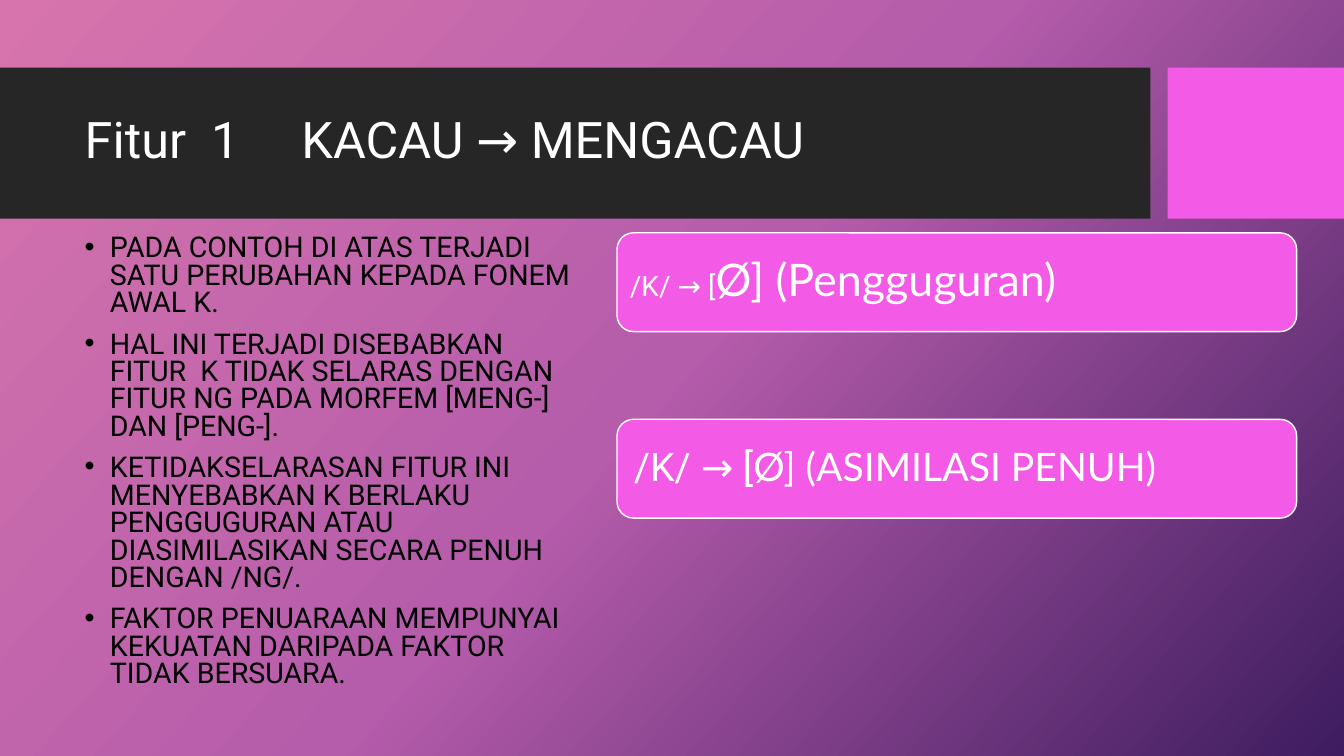
"""Build the slide on the sound change from KACAU to MENGACAU."""
from copy import deepcopy
from dataclasses import dataclass

from lxml import etree
from pptx import Presentation
from pptx.dml.color import RGBColor
from pptx.enum.shapes import MSO_SHAPE
from pptx.enum.text import MSO_ANCHOR, MSO_AUTO_SIZE, PP_ALIGN
from pptx.oxml.ns import qn
from pptx.util import Inches, Pt

RECT, ROUND = MSO_SHAPE.RECTANGLE, MSO_SHAPE.ROUNDED_RECTANGLE
TOP, MIDDLE = MSO_ANCHOR.TOP, MSO_ANCHOR.MIDDLE
LEFT, FIXED = PP_ALIGN.LEFT, MSO_AUTO_SIZE.NONE

TITLE = "Fitur  1\tKACAU → MENGACAU"
POINTS = [
    "PADA CONTOH DI ATAS TERJADI SATU PERUBAHAN KEPADA FONEM AWAL K.",
    "HAL INI TERJADI DISEBABKAN FITUR  K TIDAK SELARAS DENGAN FITUR NG "
    "PADA MORFEM [MENG-] DAN [PENG-].",
    "KETIDAKSELARASAN FITUR INI MENYEBABKAN K BERLAKU PENGGUGURAN ATAU "
    "DIASIMILASIKAN SECARA PENUH DENGAN /NG/.",
    "FAKTOR PENUARAAN MEMPUNYAI KEKUATAN DARIPADA FAKTOR TIDAK BERSUARA.",
]
RULES = [
    {"parts": [("/K/ → [", 20), ("Ø] (Pengguguran)", 32)], "inset": 0.08},
    {"parts": [("/K/ → [", 28), ("Ø] (ASIMILASI PENUH)", 28)], "inset": 0.12},
]


@dataclass(frozen=True)
class Theme:
    """Hold the colours, fonts and type sizes."""
    white: str = "FFFFFF"
    black: str = "000000"
    band: str = "262626"
    pink: str = "F35AE6"
    back: tuple = ((0, "D774AD"), (0.5, "B55CAB"), (1, "3E1C5F"))
    main: str = "Roboto"
    alt: str = "Lato"
    title: float = 36
    body: float = 20.4


THEME = Theme()


def paint(slide):
    """Fill the background with a slanted gradient."""
    fill = slide.background.fill
    fill.gradient()
    fill.gradient_angle = 318
    stops = next(slide.element.iter(qn("a:gsLst")))
    stops.insert(1, deepcopy(stops[0]))
    for stop, (place, tint) in zip(fill.gradient_stops, THEME.back):
        stop.position = place
        stop.color.rgb = RGBColor.from_string(tint)


def block(slide, kind, box, tint):
    """Add a plain filled shape."""
    shape = slide.shapes.add_shape(kind, *map(Inches, box))
    shape.shadow.inherit = False
    shape.fill.solid()
    shape.fill.fore_color.rgb = RGBColor.from_string(tint)
    shape.line.fill.background()
    return shape


def style(run, face, size, tint):
    """Set the font of a run."""
    run.font.name = face
    run.font.size = Pt(size)
    run.font.color.rgb = RGBColor.from_string(tint)


def place(holder, box, text, anchor):
    """Move a placeholder and give it text."""
    holder.left, holder.top, holder.width, holder.height = map(Inches, box)
    frame = holder.text_frame
    frame.text = text
    frame.word_wrap = True
    frame.auto_size = FIXED
    frame.vertical_anchor = anchor
    return frame.paragraphs


def head(slide):
    """Fill the title."""
    para = place(slide.shapes.title, (0.74, 0.82, 10.51, 1.18), TITLE, MIDDLE)[0]
    para.alignment = LEFT
    para.line_spacing = 0.9
    tabs = etree.SubElement(para._p.get_or_add_pPr(), qn("a:tabLst"))
    etree.SubElement(tabs, qn("a:tab"), pos=str(Inches(2.15)), algn="l")
    for run in para.runs:
        style(run, THEME.main, THEME.title, THEME.white)


def body(slide):
    """Fill the bullet list."""
    box = (0.74, 2.29, 5.14, 4.2)
    paras = place(slide.placeholders[1], box, "\n".join(POINTS), TOP)
    for rank, para in enumerate(paras):
        para.line_spacing = 0.8
        para.space_before = Pt(10 if rank else 0)
        props = para._p.get_or_add_pPr()
        props.set("marL", str(Inches(0.25)))
        props.set("indent", str(Inches(-0.25)))
        etree.SubElement(props, qn("a:buChar"), char="•")
        style(para.runs[0], THEME.main, THEME.body, THEME.black)


def card(slide, rank, rule):
    """Add one rounded card with its sound rule."""
    shape = block(slide, ROUND, (6.12, 2.31 + 1.85 * rank, 6.74, 0.98), THEME.pink)
    shape.line.color.rgb = RGBColor.from_string(THEME.white)
    shape.line.width = Pt(1)
    frame = shape.text_frame
    frame.word_wrap = True
    frame.vertical_anchor = MIDDLE
    inset = Inches(rule["inset"])
    frame.margin_left = frame.margin_right = inset
    frame.margin_top = frame.margin_bottom = inset
    para = frame.paragraphs[0]
    para.alignment = LEFT
    para.line_spacing = 0.9
    for (text, size), face in zip(rule["parts"], (THEME.main, THEME.alt)):
        run = para.add_run()
        run.text = text
        style(run, face, size, THEME.white)


def main():
    """Build and save the deck."""
    deck = Presentation()
    deck.slide_width, deck.slide_height = Inches(13.33), Inches(7.5)
    slide = deck.slides.add_slide(deck.slide_layouts[1])
    paint(slide)
    bars = [
        block(slide, RECT, (0, 0.67, 11.41, 1.5), THEME.band),
        block(slide, RECT, (11.58, 0.67, 1.75, 1.5), THEME.pink),
    ]
    for rank, bar in enumerate(bars):
        slide.shapes._spTree.insert(2 + rank, bar._element)
    head(slide)
    body(slide)
    for rank, rule in enumerate(RULES):
        card(slide, rank, rule)
    deck.save("out.pptx")


if __name__ == "__main__":
    main()
